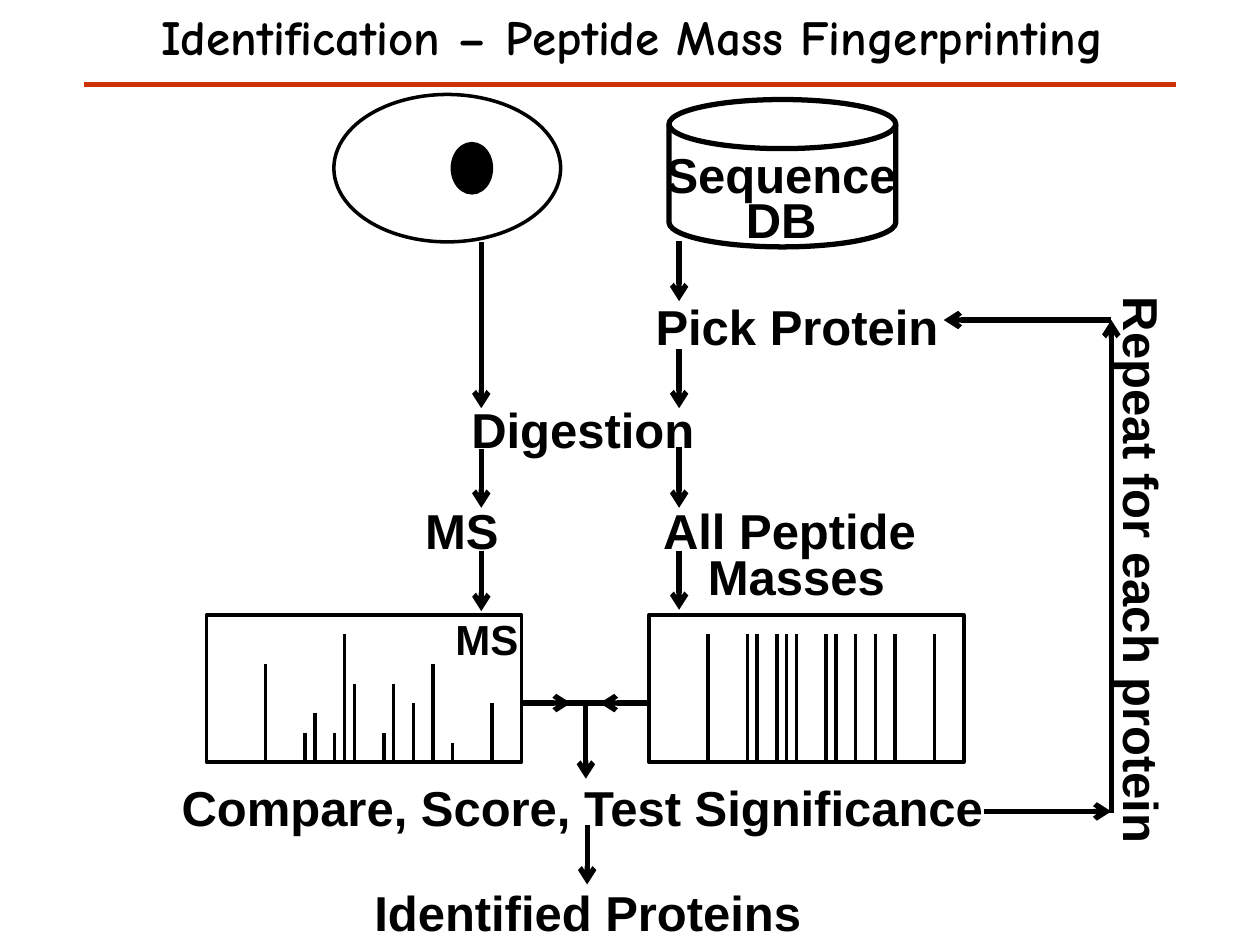
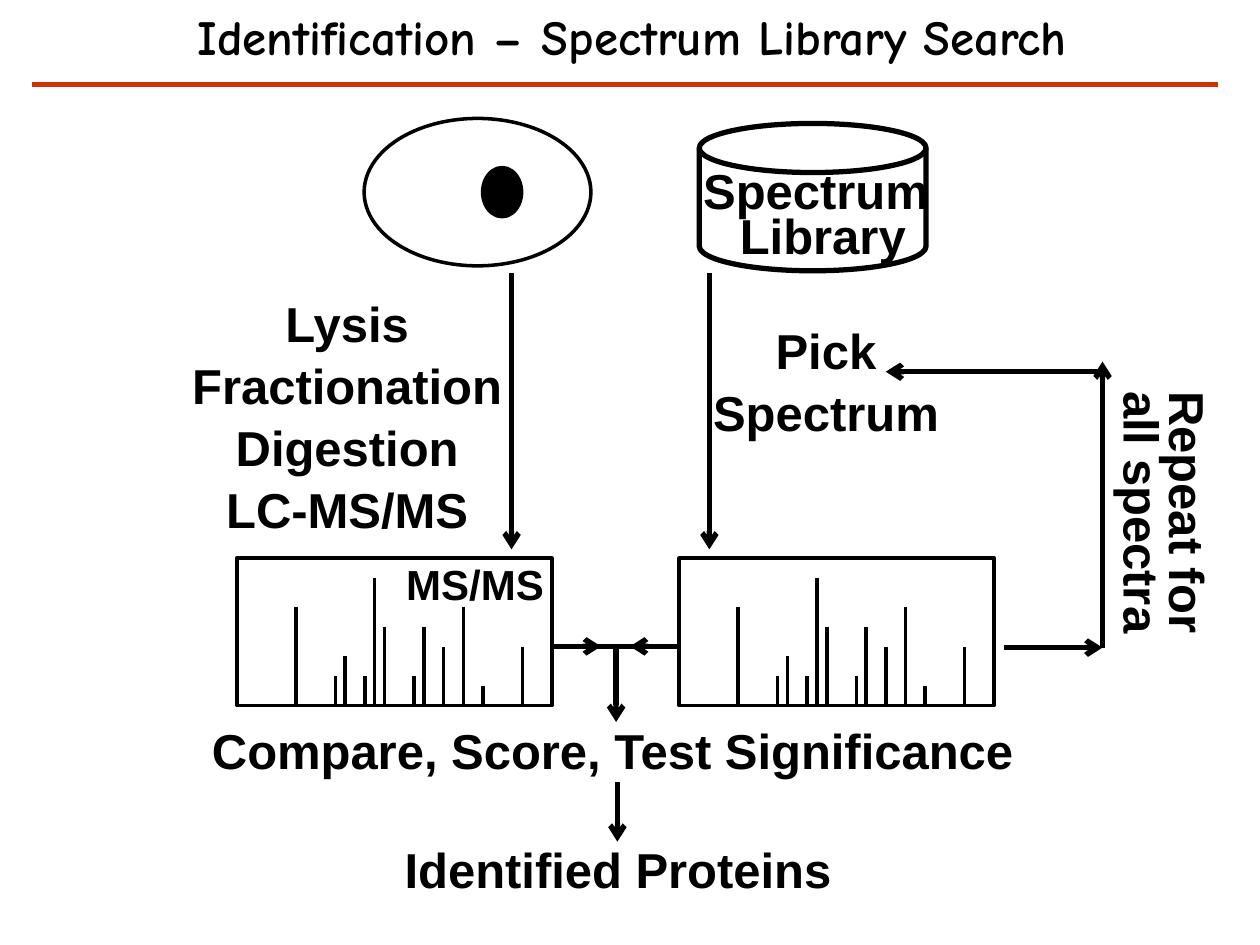
from dataclasses import dataclass

from lxml import etree
from pptx import Presentation
from pptx.dml.color import RGBColor
from pptx.enum import shapes, text
from pptx.oxml import ns
from pptx.util import Inches, Pt


@dataclass(frozen=True)
class Theme:
    ink: RGBColor = RGBColor(0, 0, 0)
    rule: RGBColor = RGBColor(0xCC, 0x33, 0)
    title_font: str = "Comic Neue"
    body_font: str = "Arial"
    size: int = 28
    small: int = 24
    loose: float = 1.05
    tight: Pt = Pt(26)
    thin: float = 2
    thick: float = 3
    rule_width: float = 2.5


T = Theme()

PANEL_W, PANEL_H = 2.5, 1.17
PANEL_GAP = 3.51
STEP = PANEL_W / 32
PEAK_COLUMNS = (6, 10, 11, 13, 14, 15, 18, 19, 21, 23, 25, 29)
MEASURED = (10, 3, 5, 3, 13, 8, 3, 8, 6, 10, 2, 6)
ALL_MASSES = (13,) * len(PEAK_COLUMNS)

SLIDES = [
    {
        "title": "Identification – Peptide Mass Fingerprinting",
        "rule": (0.67, 9.33),
        "panel": (1.64, 4.88),
        "cell_top": 0.75,
        "result_top": 6.93,
        "database_peaks": ALL_MASSES,
        "panel_label": ("MS", (3.51, 4.8, 0.71, 0.51)),
        "labels": [
            (["MS"], (3.27, 3.9, 0.79, 0.57)),
            (["Digestion"], (3.63, 3.1, 1.99, 0.57)),
            (["Pick Protein"], (5.09, 2.28, 2.47, 0.57)),
        ],
        "tight_labels": [
            (["Sequence", "DB"], (5.17, 1.2, 2.06, 0.83)),
            (["All Peptide ", "Masses"], (5.15, 4.03, 2.34, 0.83)),
        ],
        "repeat": (["Repeat for each protein"], (6.79, 4.24, 4.6, 0.57)),
        "sample_arrows": [(1.92, 3.24), (3.56, 4.03), (4.37, 4.85)],
        "database_arrows": [(1.91, 2.39), (2.77, 3.24), (3.55, 4.03), (4.37, 4.84)],
        "loop": [
            (7.81, 6.44, 8.82, 6.44),
            (8.82, 6.45, 8.82, 2.54),
            (8.82, 2.54, 7.49, 2.54),
        ],
    },
    {
        "title": "Identification – Spectrum Library Search",
        "rule": (0.25, 9.67),
        "panel": (1.88, 4.43),
        "cell_top": 0.94,
        "result_top": 6.59,
        "database_peaks": MEASURED,
        "panel_label": ("MS/MS", (3.12, 4.36, 1.3, 0.51)),
        "labels": [
            (["Lysis", "Fractionation", "Digestion", "LC-MS/MS"], (1.4, 2.26, 2.71, 2.46)),
            (["Pick", "Spectrum"], (5.55, 2.47, 2.01, 1.04)),
        ],
        "tight_labels": [(["Spectrum ", "Library"], (5.47, 1.33, 2.12, 0.83))],
        "repeat": (["Repeat for", "all spectra"], (8.12, 3.65, 2.15, 0.83)),
        "sample_arrows": [(2.17, 4.36)],
        "database_arrows": [(2.17, 4.36)],
        "loop": [
            (7.97, 5.14, 8.75, 5.14),
            (8.75, 5.14, 8.75, 2.87),
            (8.75, 2.95, 7.03, 2.95),
        ],
    },
]


def add_label(s, lines, box, size=T.size, font=T.body_font, spacing=T.loose, rotation=0):
    sp = s.shapes.add_textbox(*map(Inches, box))
    sp.rotation = rotation
    tf = sp.text_frame
    tf.word_wrap = False
    tf.auto_size = text.MSO_AUTO_SIZE.SHAPE_TO_FIT_TEXT
    for i, line in enumerate(lines):
        p = tf.add_paragraph() if i else tf.paragraphs[0]
        p.alignment = text.PP_ALIGN.CENTER
        p.line_spacing = spacing
        r = p.add_run()
        r.text = line
        r.font.name, r.font.size, r.font.bold = font, Pt(size), True
        r.font.color.rgb = T.ink


def add_outline(s, kind, box, width=T.thin, filled=False):
    sp = s.shapes.add_shape(kind, *map(Inches, box))
    sp.shadow.inherit = False
    if filled:
        sp.fill.solid()
        sp.fill.fore_color.rgb = T.ink
    else:
        sp.fill.background()
    sp.line.color.rgb = T.ink
    sp.line.width = Pt(width)


def add_line(s, ends, width=T.thick, color=T.ink, arrow=False):
    c = s.shapes.add_connector(shapes.MSO_CONNECTOR.STRAIGHT, *map(Inches, ends))
    c.line.color.rgb = color
    c.line.width = Pt(width)
    etree.SubElement(c._element.spPr, ns.qn("a:effectLst"))
    if arrow:
        etree.SubElement(c.line._get_or_add_ln(), ns.qn("a:tailEnd"), type="arrow")


def add_spectrum(s, left, top, heights):
    add_outline(s, shapes.MSO_SHAPE.RECTANGLE, (left, top, PANEL_W, PANEL_H))
    base = top + PANEL_H
    for column, height in zip(PEAK_COLUMNS, heights):
        x = left + column * STEP
        add_line(s, (x, base - height * STEP, x, base), T.thin)


def add_sources(s, x, top):
    add_outline(s, shapes.MSO_SHAPE.OVAL, (x + 1.01, top, 1.8, 1.17))
    add_outline(s, shapes.MSO_SHAPE.OVAL, (x + 1.95, top + 0.39, 0.31, 0.39), filled=True)
    add_outline(s, shapes.MSO_SHAPE.FLOWCHART_MAGNETIC_DISK,
                (x + 3.67, top + 0.04, 1.8, 1.17), T.thick)


def add_comparison(s, x, y, result_top):
    join = y + 0.7
    add_line(s, (x + PANEL_W, join, x + 2.89, join), arrow=True)
    add_line(s, (x + PANEL_GAP, join, x + 3.12, join), arrow=True)
    add_line(s, (x + 3.2, join, x + 2.81, join))
    add_line(s, (x + 3.01, join, x + 3.01, y + 1.3), arrow=True)
    add_label(s, ["Compare, Score, Test Significance "], (x - 0.34, y + 1.22, 6.75, 0.57))
    add_line(s, (x + 3.02, result_top - 0.38, x + 3.02, result_top + 0.09), arrow=True)
    add_label(s, ["Identified Proteins"], (x + 1.21, result_top, 3.63, 0.57))


def build_slide(prs, d):
    s = prs.slides.add_slide(prs.slide_layouts[6])
    x, y = d["panel"]
    left, right = d["rule"]
    add_label(s, [d["title"]], (0.72, 0, 8.59, 0.57), font=T.title_font, spacing=1.0)
    add_line(s, (left, 0.67, right, 0.67), T.rule_width, T.rule)
    add_spectrum(s, x, y, MEASURED)
    add_spectrum(s, x + PANEL_GAP, y, d["database_peaks"])
    caption, box = d["panel_label"]
    add_label(s, [caption], box, T.small)
    for lines, box in d["labels"]:
        add_label(s, lines, box)
    for lines, box in d["tight_labels"]:
        add_label(s, lines, box, spacing=T.tight)
    lines, box = d["repeat"]
    add_label(s, lines, box, spacing=T.tight if len(lines) > 1 else T.loose, rotation=90)
    add_sources(s, x, d["cell_top"])
    for offset, key in ((2.18, "sample_arrows"), (3.75, "database_arrows")):
        for start, end in d[key]:
            add_line(s, (x + offset, start, x + offset, end), arrow=True)
    for ends in d["loop"]:
        add_line(s, ends, arrow=True)
    add_comparison(s, x, y, d["result_top"])


def main():
    prs = Presentation()
    prs.slide_width, prs.slide_height = Inches(10), Inches(7.5)
    for d in SLIDES:
        build_slide(prs, d)
    prs.save("out.pptx")


if __name__ == "__main__":
    main()
